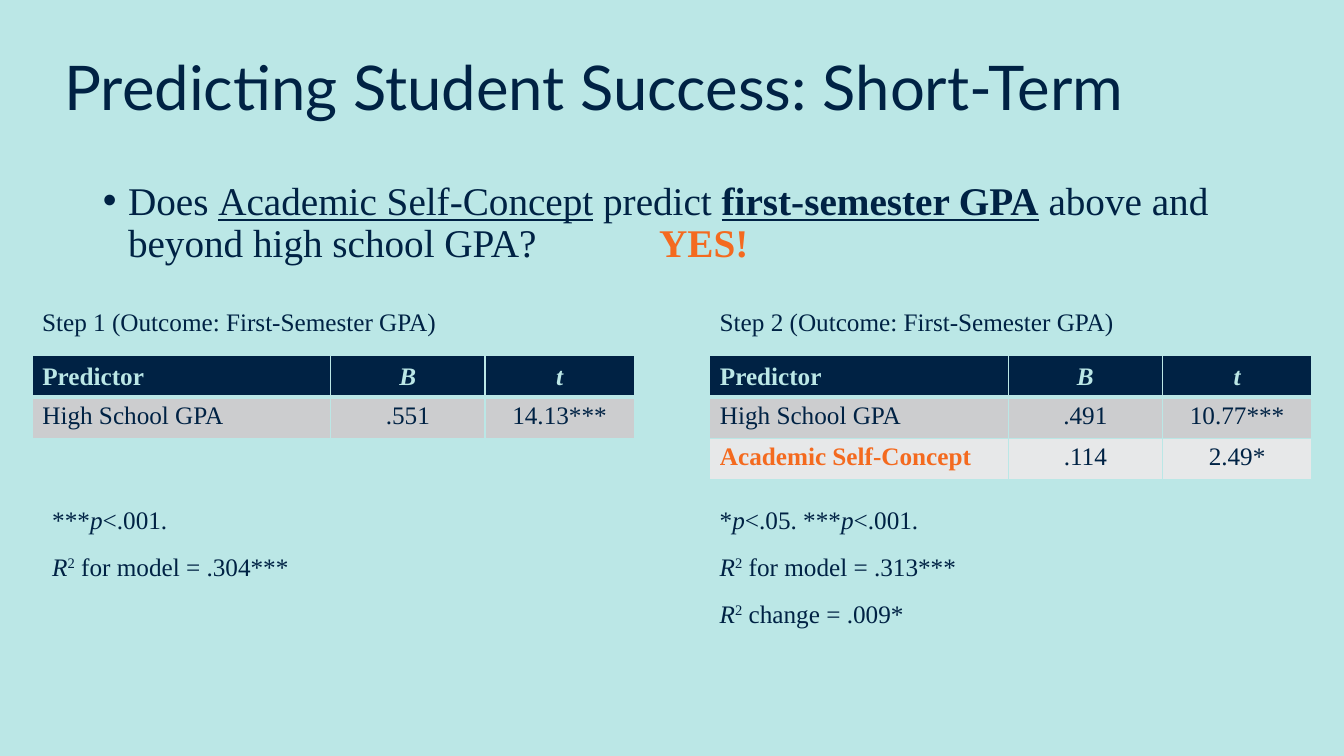
from lxml.etree import SubElement
from pptx import Presentation
from pptx.dml.color import RGBColor
from pptx.enum.text import MSO_ANCHOR, PP_ALIGN
from pptx.oxml import parse_xml
from pptx.oxml.ns import nsdecls, qn
from pptx.util import Inches, Pt

NAVY, AQUA, ORANGE = "002244", "BBE7E6", "F46A1F"
BANDS = [NAVY, "CCCDCF", "E7E8E9"]
SERIF = "Times New Roman"
WIDTHS = [2.96, 1.53, 1.48]
ROW = 0.41
PLAIN = {"bold": False, "italic": False, "underline": False}
BOLD = {"bold": True}
SLANT = {"italic": True}
LINE = {"underline": True}
SQUARE = [("R", SLANT), ("2", {"super": True})]


def paint(target, shade):
    target.rgb = RGBColor.from_string(shade)


def write(para, runs, size=18, face=SERIF, shade=NAVY):
    for text, marks in runs:
        run = para.add_run()
        run.text = text
        marks = dict(marks)
        if marks.pop("super", False):
            run._r.get_or_add_rPr().set("baseline", "30000")
        paint(run.font.color, marks.pop("shade", shade))
        style = {**PLAIN, "name": face, "size": Pt(size), **marks}
        for name, value in style.items():
            setattr(run.font, name, value)


def place(shape, left, top, width, height):
    spots = {"left": left, "top": top, "width": width, "height": height}
    for name, value in spots.items():
        setattr(shape, name, Inches(value))


def add_text(slide, spot, paras, **style):
    box = slide.shapes.add_textbox(*map(Inches, spot))
    frame = box.text_frame
    frame.word_wrap = True
    for n, runs in enumerate(paras):
        para = frame.add_paragraph() if n else frame.paragraphs[0]
        if n:
            para.space_before = Pt(12)
        write(para, runs, **style)


def add_edge(cell, base):
    props = cell._tc.get_or_add_tcPr()
    for n, side in enumerate("LRTB"):
        width = Pt(base if side == "B" else 1)
        props.insert(n, parse_xml(
            f'<a:ln{side} {nsdecls("a")} w="{width}"><a:solidFill>'
            f'<a:srgbClr val="{AQUA}"/></a:solidFill></a:ln{side}>'))


def add_grid(slide, left, rows):
    rows = [[("Predictor", {}), ("B", SLANT), ("t", SLANT)]] + rows
    spot = (left, 3.53, sum(WIDTHS), ROW * len(rows))
    grid = slide.shapes.add_table(len(rows), 3, *map(Inches, spot)).table
    for col, width in zip(grid.columns, WIDTHS):
        col.width = Inches(width)
    for r, row in enumerate(rows):
        grid.rows[r].height = Inches(ROW)
        for c, (text, marks) in enumerate(row):
            cell = grid.cell(r, c)
            cell.fill.solid()
            paint(cell.fill.fore_color, BANDS[r])
            head = r == 0
            add_edge(cell, 3 if head else 1)
            cell.vertical_anchor = MSO_ANCHOR.MIDDLE if head else MSO_ANCHOR.TOP
            para = cell.text_frame.paragraphs[0]
            para.alignment = PP_ALIGN.CENTER if c else PP_ALIGN.LEFT
            if head:
                marks = {**BOLD, "shade": AQUA, **marks}
            write(para, [(text, marks)])


def set_title(slide):
    title = slide.shapes.title
    place(title, 0.54, 0.17, 11.5, 1.45)
    title.text_frame.vertical_anchor = MSO_ANCHOR.MIDDLE
    para = title.text_frame.paragraphs[0]
    para.alignment = PP_ALIGN.LEFT
    para.line_spacing = 0.9
    write(para, [("Predicting Student Success: Short-Term", {})], 44, "Lato")


def set_body(slide):
    body = slide.placeholders[1]
    place(body, 0.92, 1.75, 11.5, 5.01)
    para = body.text_frame.paragraphs[0]
    para.line_spacing = 0.9
    para.space_before = Pt(0)
    props = para._p.get_or_add_pPr()
    props.set("marL", str(Inches(0.25)))
    props.set("indent", str(Inches(-0.25)))
    SubElement(props, qn("a:buFont")).set("typeface", "Arial")
    SubElement(props, qn("a:buChar")).set("char", "•")
    write(para, [
        ("Does ", {}),
        ("Academic Self-Concept", LINE),
        (" predict ", {}),
        ("first-semester GPA", {**BOLD, **LINE}),
        (" above and beyond high school GPA?", {}),
    ], 28)


def add_step(slide, left, step, rows, inset, notes):
    label = f"Step {step} (Outcome: First-Semester GPA)"
    add_text(slide, (left, 2.99, 5.97, 0.41), [[(label, {})]])
    add_grid(slide, left, rows)
    height = 0.41 + 0.47 * (len(notes) - 1)
    add_text(slide, (left + inset, 4.95, 5.5, height), notes)


def main():
    deck = Presentation()
    deck.slide_width, deck.slide_height = Inches(13.33), Inches(7.5)
    slide = deck.slides.add_slide(deck.slide_layouts[1])
    slide.background.fill.solid()
    paint(slide.background.fill.fore_color, AQUA)
    set_title(slide)
    set_body(slide)
    add_step(slide, 0.32, 1, [
        [("High School GPA", {}), (".551", {}), ("14.13***", {})],
    ], 0.1, [
        [("***", {}), ("p", SLANT), ("<.001.", {})],
        SQUARE + [(" for model = .304***", {})],
    ])
    add_step(slide, 7.04, 2, [
        [("High School GPA", {}), (".491", {}), ("10.77***", {})],
        [("Academic Self-Concept", {**BOLD, "shade": ORANGE}),
         (".114", {}), ("2.49*", {})],
    ], 0, [
        [("*", {}), ("p", SLANT), ("<.05. ***", {}), ("p", SLANT), ("<.001.", {})],
        SQUARE + [(" for model = .313***", {})],
        SQUARE + [(" change = .009*", {})],
    ])
    add_text(slide, (6.44, 2.12, 1.2, 0.57), [[("YES!", BOLD)]],
             size=28, shade=ORANGE)
    deck.save("out.pptx")


if __name__ == "__main__":
    main()
